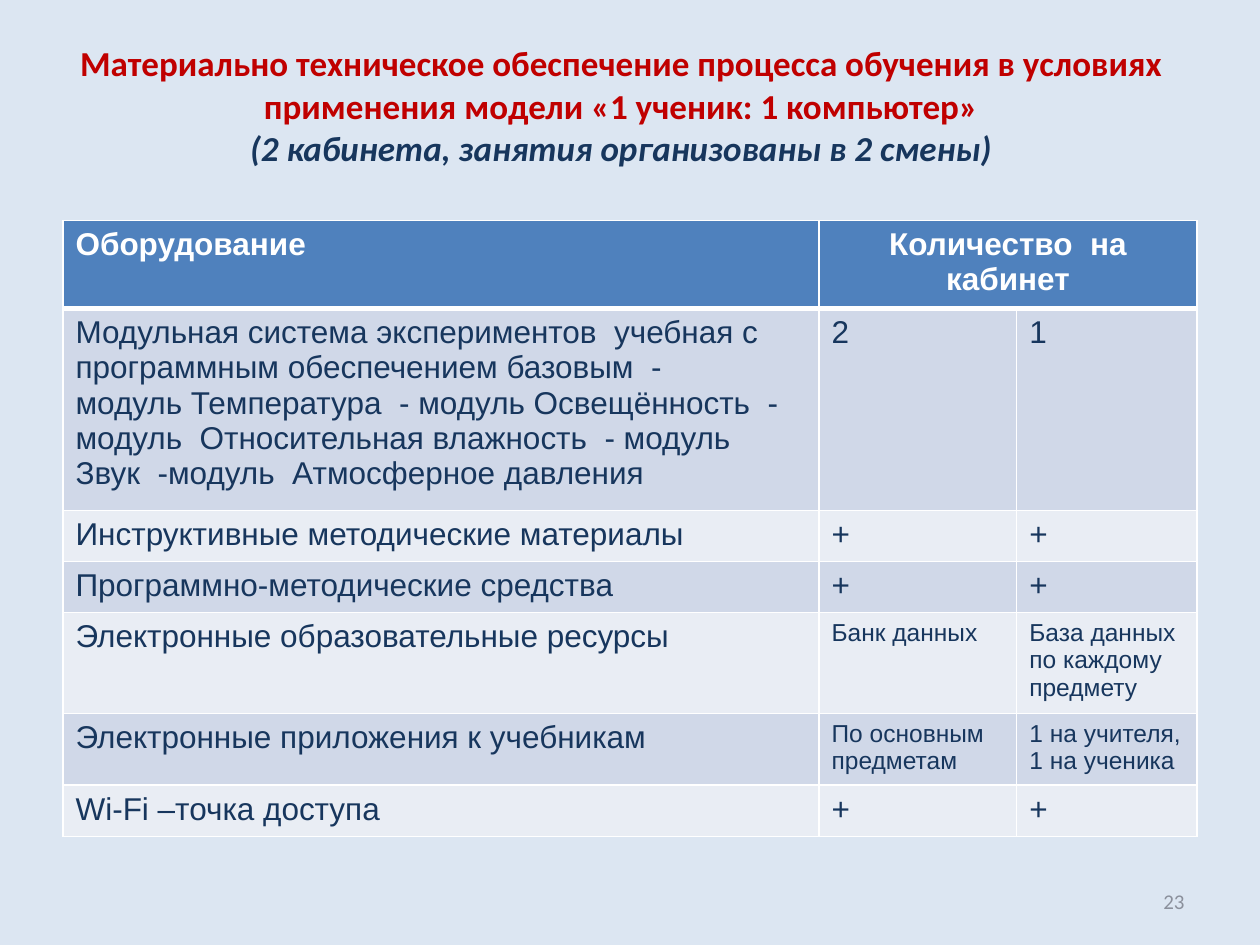
from lxml.etree import SubElement
from pptx import Presentation
from pptx.dml.color import RGBColor
from pptx.enum.text import MSO_ANCHOR, PP_ALIGN
from pptx.oxml.ns import qn
from pptx.util import Pt

COLORS = {
    "background": "DCE6F2", "title": "C00000", "text": "17365D",
    "header": "4F81BD", "white": "FFFFFF", "number": "8B909C",
    "odd": "D0D8E8", "even": "E9EDF4",
}
TITLE = "Материально техническое обеспечение процесса обучения в условиях применения модели «1 ученик: 1 компьютер»"
SUBTITLE = "(2 кабинета, занятия организованы в 2 смены)"
PAGE_NUMBER = "23"
ROWS = [
    ("Оборудование", "Количество  на кабинет", ""),
    ("Модульная система экспериментов  учебная с программным обеспечением базовым  -\n"
     "модуль Температура  - модуль Освещённость  - модуль  Относительная влажность  - модуль  Звук  -модуль  Атмосферное давления",
     "2", "1"),
    ("Инструктивные методические материалы", "+", "+"),
    ("Программно-методические средства", "+", "+"),
    ("Электронные образовательные ресурсы", "Банк данных", "База данных по каждому предмету"),
    ("Электронные приложения к учебникам", "По основным предметам", "1 на учителя, 1 на ученика"),
    ("Wi-Fi –точка доступа", "+", "+"),
]
COLUMN_WIDTHS = [432, 113, 103]
ROW_HEIGHTS = [29.2, 115.2, 29.2, 29.2, 57.6, 41, 29.2]
SMALL_TEXT_ROWS = (4, 5)


def color(name):
    return RGBColor.from_string(COLORS[name])


def format_run(run, color_name, **font_values):
    for name, value in font_values.items():
        setattr(run.font, name, value)
    run.font.color.rgb = color(color_name)


def add_text_box(slide, left, top, width, height, alignment):
    frame = slide.shapes.add_textbox(Pt(left), Pt(top), Pt(width), Pt(height)).text_frame
    frame.word_wrap = True
    frame.vertical_anchor = MSO_ANCHOR.MIDDLE
    paragraph = frame.paragraphs[0]
    paragraph.alignment = alignment
    return paragraph


def add_borders(cell, row):
    properties = cell._tc.get_or_add_tcPr()
    widths = {"lnL": 1, "lnR": 1, "lnT": 3 if row == 1 else 1, "lnB": 3 if row == 0 else 1}
    for side, width in widths.items():
        line = SubElement(properties, qn(f"a:{side}"), w=str(Pt(width)))
        fill = SubElement(line, qn("a:solidFill"))
        SubElement(fill, qn("a:srgbClr"), val=COLORS["white"])


def fill_cell(cell, text, row, column):
    header = row == 0
    small = column > 0 and row in SMALL_TEXT_ROWS
    add_borders(cell, row)
    cell.fill.solid()
    cell.fill.fore_color.rgb = color("header" if header else "odd" if row % 2 else "even")
    cell.text = text
    for paragraph in cell.text_frame.paragraphs:
        paragraph.alignment = PP_ALIGN.CENTER if header and column else PP_ALIGN.LEFT
        for run in paragraph.runs:
            format_run(run, "white" if header else "text", name="Arial",
                       size=Pt(14 if small else 18), bold=header)


def add_equipment_table(slide):
    table = slide.shapes.add_table(
        len(ROWS), len(COLUMN_WIDTHS), Pt(36), Pt(126),
        Pt(sum(COLUMN_WIDTHS)), Pt(sum(ROW_HEIGHTS))).table
    for column, width in zip(table.columns, COLUMN_WIDTHS):
        column.width = Pt(width)
    for row, height in zip(table.rows, ROW_HEIGHTS):
        row.height = Pt(height)
    table.cell(0, 1).merge(table.cell(0, 2))
    for row, texts in enumerate(ROWS):
        for column, text in enumerate(texts):
            fill_cell(table.cell(row, column), text, row, column)


def main():
    presentation = Presentation()
    presentation.slide_width, presentation.slide_height = Pt(720), Pt(540)
    slide = presentation.slides.add_slide(presentation.slide_layouts[6])
    slide.background.fill.solid()
    slide.background.fill.fore_color.rgb = color("background")

    title = add_text_box(slide, 31, 15, 648, 90, PP_ALIGN.CENTER)
    title_font = {"name": "Calibri", "size": Pt(20), "bold": True}
    run = title.add_run()
    run.text = TITLE
    format_run(run, "title", **title_font)
    title.add_line_break()
    run = title.add_run()
    run.text = SUBTITLE
    format_run(run, "text", italic=True, **title_font)

    add_equipment_table(slide)

    run = add_text_box(slide, 516, 500.4, 168, 28.8, PP_ALIGN.RIGHT).add_run()
    run.text = PAGE_NUMBER
    format_run(run, "number", name="Calibri", size=Pt(12))
    presentation.save("out.pptx")


if __name__ == "__main__":
    main()
